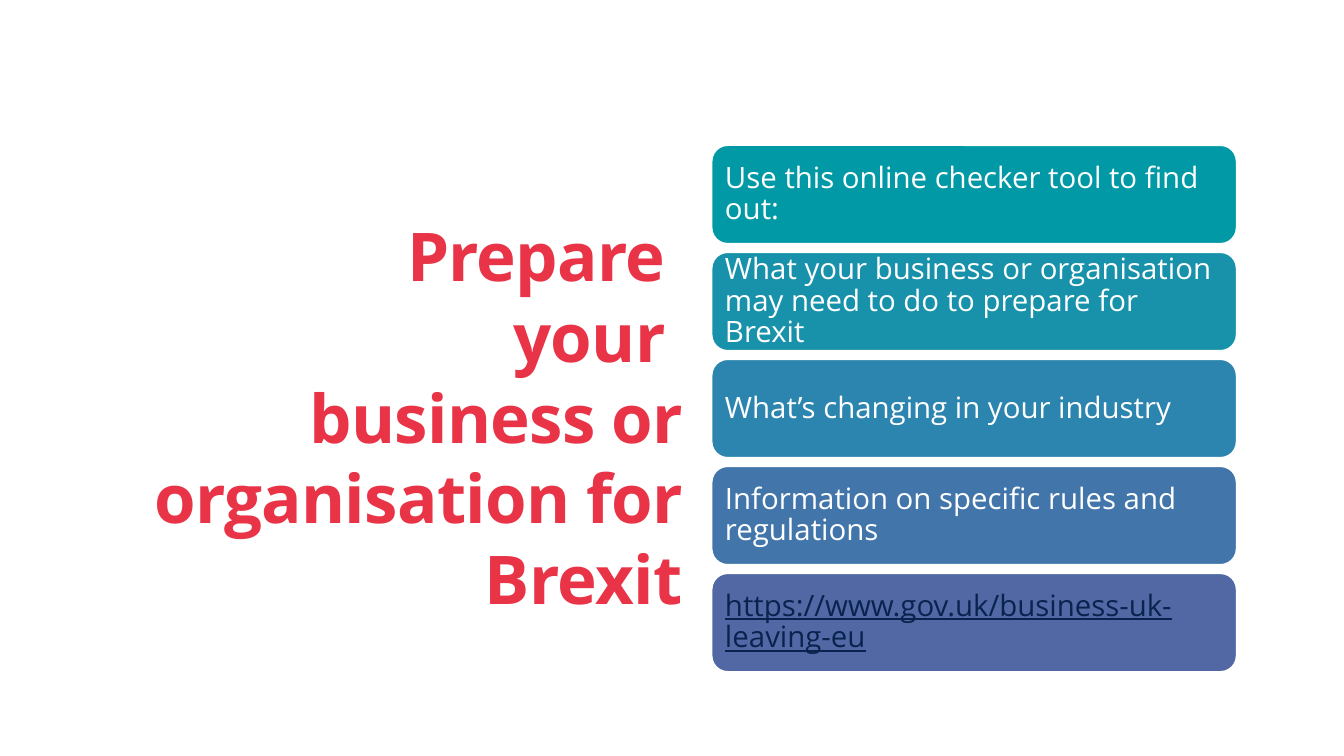
from dataclasses import dataclass

from pptx import Presentation
from pptx.dml.color import RGBColor
from pptx.enum import shapes, text
from pptx.util import Pt


@dataclass(frozen=True)
class Theme:
    """Colours and type sizes of the slide."""
    font: str = "Open Sans"
    title_size: int = 48
    step_size: int = 21
    title: str = "E93447"
    white: str = "FFFFFF"
    link: str = "08244E"
    steps: tuple = ("0099A5", "1891AB", "2C85AE", "4276AA", "5268A5")


THEME = Theme()
TITLE_LINES = ["Prepare ", "your ", "business or organisation for Brexit"]
STEPS = [
    "Use this online checker tool to find out:\u00a0".replace("\u00a0", " ").rstrip(),
    "What your business or organisation may need to do to prepare for Brexit",
    "What’s changing in your industry",
    "Information on specific rules and regulations",
    "https://www.gov.uk/business-uk-leaving-eu",
]


def add_run(paragraph, wording, size, colour):
    """Add one run in the theme font and return it."""
    run = paragraph.add_run()
    run.text = wording
    run.font.name = THEME.font
    run.font.size = Pt(size)
    run.font.color.rgb = RGBColor.from_string(colour)
    return run


def add_title(slide, left, top, width, height):
    """Place the right-aligned title in the given box."""
    title = slide.shapes.add_textbox(Pt(left), Pt(top), Pt(width), Pt(height))
    frame = title.text_frame
    frame.word_wrap = True
    frame.auto_size = text.MSO_AUTO_SIZE.SHAPE_TO_FIT_TEXT
    for index, line in enumerate(TITLE_LINES):
        paragraph = frame.add_paragraph() if index else frame.paragraphs[0]
        paragraph.alignment = text.PP_ALIGN.RIGHT
        run = add_run(paragraph, line, THEME.title_size, THEME.title)
        run.font.bold = True
        run.font._element.set("spc", "-50")


def add_step(slide, wording, fill, left, top, width, height):
    """Place one rounded panel with its wording in the given box."""
    panel = slide.shapes.add_shape(
        shapes.MSO_SHAPE.ROUNDED_RECTANGLE, Pt(left), Pt(top), Pt(width), Pt(height))
    panel.shadow.inherit = False
    panel.fill.solid()
    panel.fill.fore_color.rgb = RGBColor.from_string(fill)
    panel.line.color.rgb = RGBColor.from_string(THEME.white)
    panel.line.width = Pt(2)
    frame = panel.text_frame
    frame.word_wrap = True
    frame.vertical_anchor = text.MSO_ANCHOR.MIDDLE
    frame.margin_left = frame.margin_right = Pt(6.5)
    frame.margin_top = frame.margin_bottom = Pt(6.5)
    paragraph = frame.paragraphs[0]
    paragraph.alignment = text.PP_ALIGN.LEFT
    paragraph.line_spacing = 0.9
    is_link = wording.startswith("https://")
    run = add_run(paragraph, wording, THEME.step_size,
                  THEME.link if is_link else THEME.white)
    run.font.underline = is_link


def add_steps(slide, left, top, width, height, gap):
    """Stack the panels evenly in the given box."""
    panel_height = (height - gap * (len(STEPS) - 1)) / len(STEPS)
    for index, (wording, fill) in enumerate(zip(STEPS, THEME.steps)):
        panel_top = top + index * (panel_height + gap)
        add_step(slide, wording, fill, left, panel_top, width, panel_height)


def main():
    """Build the slide and save it."""
    deck = Presentation()
    deck.slide_width, deck.slide_height = Pt(960), Pt(540)
    slide = deck.slides.add_slide(deck.slide_layouts[6])
    add_steps(slide, left=507.9, top=103.3, width=375.8, height=377, gap=5.2)
    add_title(slide, left=23, top=149.8, width=471.6, height=298)
    deck.save("out.pptx")


if __name__ == "__main__":
    main()
